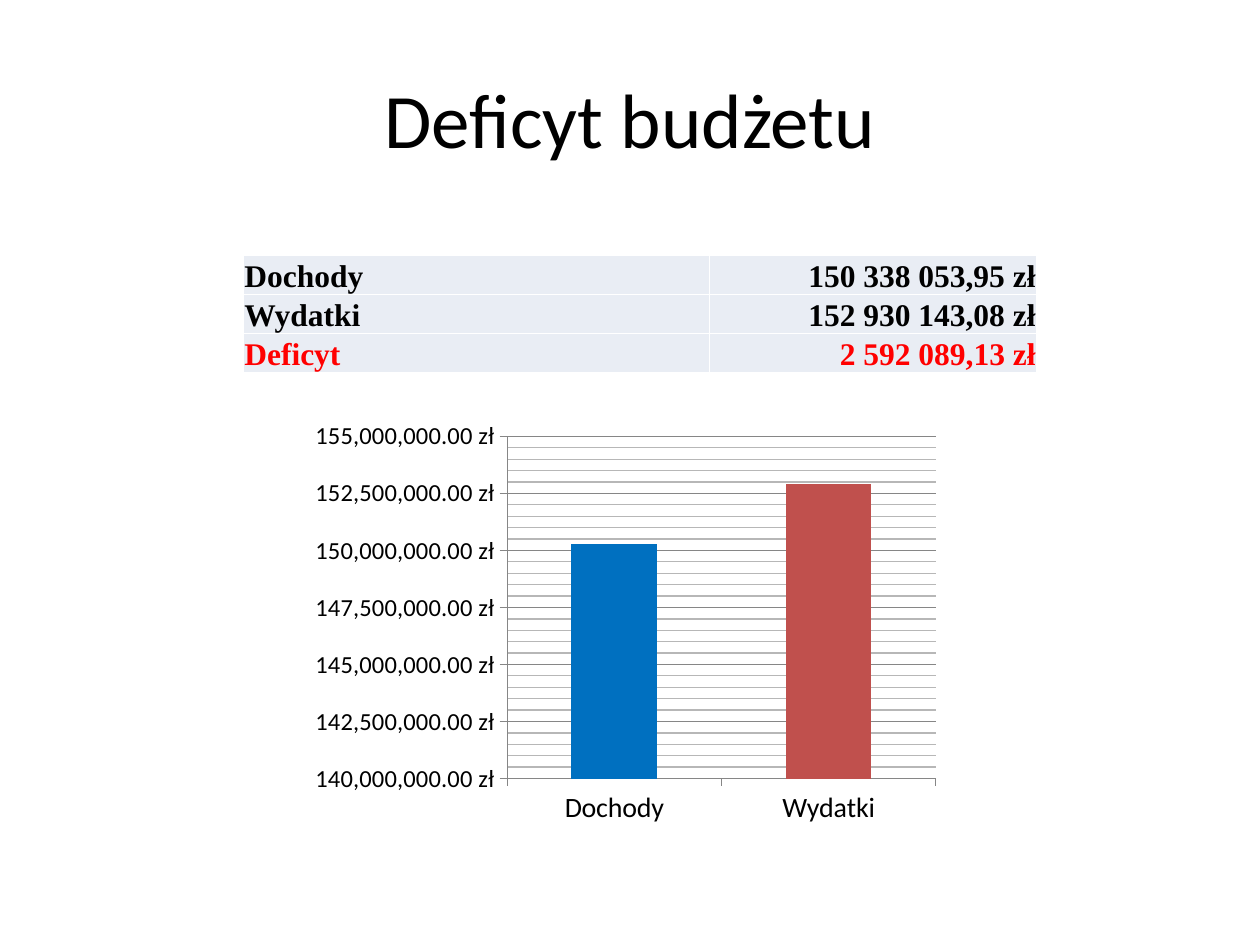
from dataclasses import dataclass

from lxml import etree
from pptx import Presentation, util as u
from pptx.chart.data import CategoryChartData
from pptx.dml.color import RGBColor
from pptx.enum import chart as ch, text
from pptx.oxml.ns import qn

WIDTH, HEIGHT = u.Inches(10), u.Inches(7.5)
BLACK, RED, GRID = "000000", "FF0000", "868686"


@dataclass
class Entry:
    label: str
    amount: str
    color: str = BLACK


@dataclass
class Bar:
    label: str
    value: int
    color: str


ENTRIES = [
    Entry("Dochody", "150 338 053,95 zł"),
    Entry("Wydatki", "152 930 143,08 zł"),
    Entry("Deficyt", "2 592 089,13 zł", RED),
]
BARS = [Bar("Dochody", 150_300_000, "0070C0"), Bar("Wydatki", 152_900_000, "C0504D")]


def rgb(color: str) -> RGBColor:
    return RGBColor.from_string(color)


def box(left: float, top: float, width: float, height: float) -> tuple:
    """Turn shares of the slide's size into lengths."""
    return (int(left * WIDTH), int(top * HEIGHT), int(width * WIDTH), int(height * HEIGHT))


def style(font, size: float, name: str = "Calibri", color: str = BLACK, bold: bool = False) -> None:
    font.size, font.name, font.bold = u.Pt(size), name, bold
    font.color.rgb = rgb(color)


def add_title(s, wording: str) -> None:
    tf = s.shapes.add_textbox(*box(0.05, 0.04, 0.9, 0.17)).text_frame
    tf.word_wrap = True
    tf.vertical_anchor = text.MSO_ANCHOR.MIDDLE
    p = tf.paragraphs[0]
    p.text = wording
    p.alignment = text.PP_ALIGN.CENTER
    style(p.runs[0].font, 44)


def add_borders(cell, color: str) -> None:
    pr = cell._tc.get_or_add_tcPr()
    for i, side in enumerate(("lnL", "lnR", "lnT", "lnB")):
        ln = etree.Element(qn(f"a:{side}"), w=str(u.Pt(1)))
        fill = etree.SubElement(ln, qn("a:solidFill"))
        etree.SubElement(fill, qn("a:srgbClr"), val=color)
        pr.insert(i, ln)


def fill_cell(cell, wording: str, color: str, align) -> None:
    cell.fill.solid()
    cell.fill.fore_color.rgb = rgb("E9EDF4")
    cell.margin_left = cell.margin_right = cell.margin_top = u.Inches(0.01)
    cell.margin_bottom = 0
    cell.vertical_anchor = text.MSO_ANCHOR.BOTTOM
    p = cell.text_frame.paragraphs[0]
    p.text = wording
    p.alignment = align
    style(p.runs[0].font, 18, "Times New Roman", color, True)
    add_borders(cell, "FFFFFF")


def add_budget_table(s, entries: list[Entry]) -> None:
    table = s.shapes.add_table(len(entries), 2, *box(0.193, 0.27, 0.63, 0.11)).table
    for column, share in zip(table.columns, (0.37, 0.26)):
        column.width = int(share * WIDTH)
    for row, entry in zip(table.rows, entries):
        fill_cell(row.cells[0], entry.label, entry.color, text.PP_ALIGN.LEFT)
        fill_cell(row.cells[1], entry.amount, entry.color, text.PP_ALIGN.RIGHT)


def add_budget_chart(s, bars: list[Bar]) -> None:
    data = CategoryChartData()
    data.categories = [bar.label for bar in bars]
    data.add_series("Series 1", [bar.value for bar in bars])
    chart = s.shapes.add_chart(ch.XL_CHART_TYPE.COLUMN_CLUSTERED,
                               *box(0.24, 0.437, 0.513, 0.445), data).chart
    chart.has_legend = chart.has_title = False
    style(chart.font, 16)

    # Columns, one colour each
    plot = chart.plots[0]
    plot.gap_width, plot.vary_by_categories = 150, False
    for i, bar in enumerate(bars):
        fill = plot.series[0].points[i].format.fill
        fill.solid()
        fill.fore_color.rgb = rgb(bar.color)

    # Axes and gridlines
    val, cat = chart.value_axis, chart.category_axis
    val.minimum_scale, val.maximum_scale = 140_000_000, 155_000_000
    val.major_unit, val.minor_unit = 2_500_000, 500_000
    val.has_major_gridlines = val.has_minor_gridlines = True
    val.tick_labels.number_format = '#,##0.00\\ "zł"'
    val.tick_labels.number_format_is_linked = False
    style(val.tick_labels.font, 14)
    for axis in (val, cat):
        axis.major_tick_mark = ch.XL_TICK_MARK.OUTSIDE
        axis.minor_tick_mark = ch.XL_TICK_MARK.NONE
    for part, color in ((val, GRID), (cat, GRID), (val.major_gridlines, GRID)):
        part.format.line.color.rgb = rgb(color)
        part.format.line.width = u.Pt(0.75)
    minor = val._element.find(qn("c:minorGridlines"))
    props = etree.SubElement(minor, qn("c:spPr"))
    line = etree.SubElement(props, qn("a:ln"), w=str(u.Pt(0.75)))
    fill = etree.SubElement(line, qn("a:solidFill"))
    etree.SubElement(fill, qn("a:srgbClr"), val="B7B7B7")


def main() -> None:
    prs = Presentation()
    prs.slide_width, prs.slide_height = WIDTH, HEIGHT
    s = prs.slides.add_slide(prs.slide_layouts[6])
    add_title(s, "Deficyt budżetu")
    add_budget_chart(s, BARS)
    add_budget_table(s, ENTRIES)
    prs.save("out.pptx")


if __name__ == "__main__":
    main()
